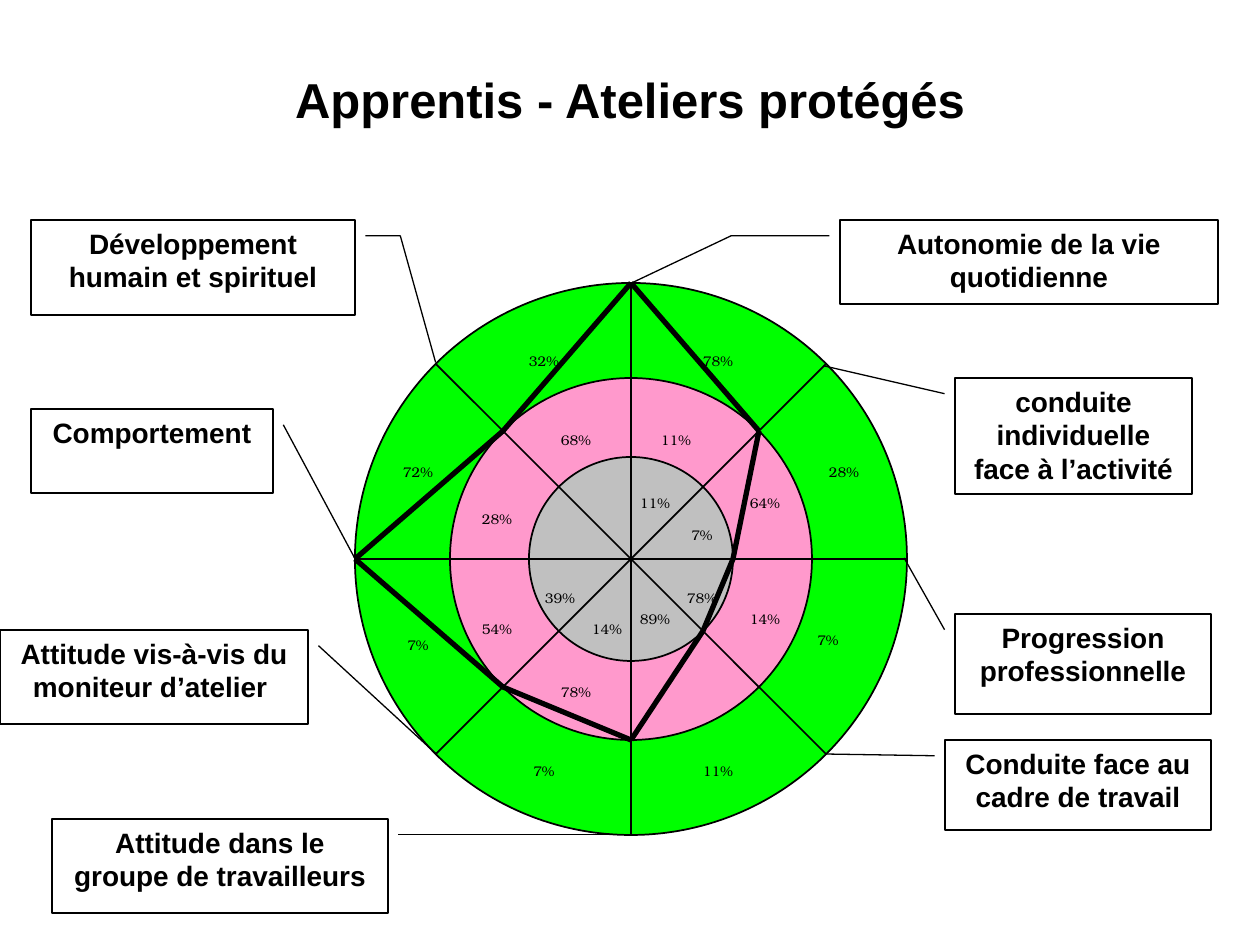
"""Draw a wheel of eight skill areas with callouts, shares and a profile line."""
import math
from dataclasses import dataclass
from typing import NamedTuple

import lxml.etree
import pptx
import pptx.dml.color
import pptx.enum.shapes
import pptx.enum.text
import pptx.oxml.ns
import pptx.util

SCALE = 914400 / 126
KIND = pptx.enum.shapes.MSO_SHAPE


@dataclass(frozen=True)
class Theme:
    ink: str = "000000"
    paper: str = "FFFFFF"
    green: str = "00FF00"
    pink: str = "FF99CC"
    grey: str = "C0C0C0"
    sans: str = "Arial"
    serif: str = "TeX Gyre Bonum"
    title: int = 28
    body: int = 16
    small: int = 8
    thin: float = 0.75
    rim: float = 1
    thick: float = 3


class Box(NamedTuple):
    left: int
    top: int
    width: int
    height: int


class Point(NamedTuple):
    x: int
    y: int


class Ring(NamedTuple):
    radius: int
    fill: str


class Note(NamedTuple):
    text: str
    box: Box
    bends: tuple[float, ...]


class Share(NamedTuple):
    value: int
    left: int
    top: int


LOOK = Theme()
HUB = Point(631, 559)
OUTER, MIDDLE, INNER = 276, 181, 102
RINGS = [Ring(OUTER, LOOK.green), Ring(MIDDLE, LOOK.pink), Ring(INNER, LOOK.grey)]
REACH = [OUTER, MIDDLE, INNER, INNER, MIDDLE, MIDDLE, OUTER, MIDDLE]
NOTES = [
    Note("conduite individuelle face à l’activité", Box(955, 378, 237, 116),
         (0.136, -0.044, -0.106, -0.556)),
    Note("Autonomie de la vie quotidienne", Box(840, 220, 378, 84),
         (0.188, -0.028, 0.188, -0.288, 0.75, -0.551)),
    Note("Progression professionnelle", Box(955, 614, 256, 100),
         (0.158, -0.041, -0.561, -0.199)),
    Note("Conduite face au cadre de travail", Box(945, 740, 266, 90),
         (0.176, -0.039, 0.157, -0.447)),
    Note("Attitude dans le groupe de travailleurs", Box(52, 819, 336, 94),
         (0.167, 1.031, 0.167, 1.681, 0.167, 1.719)),
    Note("Attitude vis-à-vis du moniteur d’atelier ", Box(0, 630, 308, 94),
         (0.167, 1.034, 1.315, 1.415)),
    Note("Comportement", Box(31, 409, 242, 84), (0.188, 1.043, 1.792, 1.341)),
    Note("Développement humain et spirituel", Box(31, 220, 324, 95),
         (0.167, 1.032, 0.167, 1.14, 1.5, 1.249)),
]
SHARES = [
    Share(78, 702, 346), Share(11, 660, 425), Share(11, 639, 488),
    Share(28, 828, 457), Share(64, 749, 488), Share(7, 686, 520),
    Share(7, 812, 625), Share(14, 749, 604), Share(78, 686, 583),
    Share(11, 702, 756), Share(89, 639, 604),
    Share(7, 528, 756), Share(78, 560, 677), Share(14, 591, 614),
    Share(7, 402, 630), Share(54, 481, 614), Share(39, 544, 583),
    Share(72, 402, 457), Share(28, 481, 504),
    Share(32, 528, 346), Share(68, 560, 425),
]


def emu(px: int) -> int:
    """Turn px into EMU."""
    return round(px * SCALE)


def place(box: Box) -> list[int]:
    """Turn a box into EMU lengths."""
    return [emu(px) for px in box]


def tint(code: str) -> pptx.dml.color.RGBColor:
    """Give the colour for a hex code."""
    return pptx.dml.color.RGBColor.from_string(code)


def write(shape, text: str, font: str, size: int, bold: bool) -> None:
    """Put centred text at the top of a shape."""
    frame = shape.text_frame
    frame.word_wrap = True
    frame.vertical_anchor = pptx.enum.text.MSO_ANCHOR.TOP
    para = frame.paragraphs[0]
    para.alignment = pptx.enum.text.PP_ALIGN.CENTER
    run = para.add_run()
    run.text = text
    style = {"name": font, "size": pptx.util.Pt(size), "bold": bold}
    for key, value in style.items():
        setattr(run.font, key, value)
    run.font.color.rgb = tint(LOOK.ink)


def stroke(line, width: float) -> None:
    """Set an ink line of the given width."""
    line.color.rgb = tint(LOOK.ink)
    line.width = pptx.util.Pt(width)


def add_form(slide, kind, box: Box, fill: str, width: float):
    """Add a filled and outlined preset shape."""
    shape = slide.shapes.add_shape(kind, *place(box))
    shape.shadow.inherit = False
    shape.fill.solid()
    shape.fill.fore_color.rgb = tint(fill)
    stroke(shape.line, width)
    return shape


def add_ring(slide, ring: Ring) -> None:
    """Add a disc with its diagonals around the hub."""
    side = 2 * ring.radius
    box = Box(HUB.x - ring.radius, HUB.y - ring.radius, side, side)
    add_form(slide, KIND.FLOWCHART_SUMMING_JUNCTION, box, ring.fill, LOOK.rim)


def add_line(slide, start: Point, end: Point, width: float) -> None:
    """Add a straight line without shadow."""
    kind = pptx.enum.shapes.MSO_CONNECTOR.STRAIGHT
    line = slide.shapes.add_connector(kind, *place(Box(*start, *end)))
    stroke(line.line, width)
    lxml.etree.SubElement(line._element.spPr, pptx.oxml.ns.qn("a:effectLst"))


def add_note(slide, note: Note) -> None:
    """Add a callout whose leader meets the wheel."""
    kind = KIND.LINE_CALLOUT_1 if len(note.bends) == 4 else KIND.LINE_CALLOUT_2
    shape = add_form(slide, kind, note.box, LOOK.paper, LOOK.thin)
    for index, bend in enumerate(note.bends):
        shape.adjustments[index] = bend
    write(shape, note.text, LOOK.sans, LOOK.body, True)


def add_text(slide, box: Box, text: str, font: str, size: int, bold: bool):
    """Add a text box."""
    shape = slide.shapes.add_textbox(*place(box))
    write(shape, text, font, size, bold)
    return shape


def add_share(slide, share: Share) -> None:
    """Add a percentage on one line."""
    box = Box(share.left, share.top, 32, 16)
    shape = add_text(slide, box, f"{share.value}%", LOOK.serif, LOOK.small, False)
    layout = {"word_wrap": False, "margin_left": 0, "margin_right": 0}
    for key, value in layout.items():
        setattr(shape.text_frame, key, value)


def spoke(step: int, reach: int) -> Point:
    """Find a point on one of eight spokes, clockwise from the top."""
    turn = step * math.pi / 4
    return Point(round(HUB.x + reach * math.sin(turn)), round(HUB.y - reach * math.cos(turn)))


def main() -> None:
    """Build and save the slide."""
    deck = pptx.Presentation()
    deck.slide_width, deck.slide_height = emu(1260), emu(945)
    slide = deck.slides.add_slide(deck.slide_layouts[6])
    add_text(slide, Box(0, 63, 1260, 72), "Apprentis - Ateliers protégés",
             LOOK.sans, LOOK.title, True)
    for ring in RINGS:
        add_ring(slide, ring)
    for step in (0, 6):
        add_line(slide, spoke(step, OUTER), spoke(step + 4, OUTER), LOOK.rim)
    for note in NOTES:
        add_note(slide, note)
    knots = [spoke(step, reach) for step, reach in enumerate(REACH)]
    for start, end in zip(knots, knots[1:] + knots[:1]):
        add_line(slide, start, end, LOOK.thick)
    for share in SHARES:
        add_share(slide, share)
    deck.save("out.pptx")


if __name__ == "__main__":
    main()
